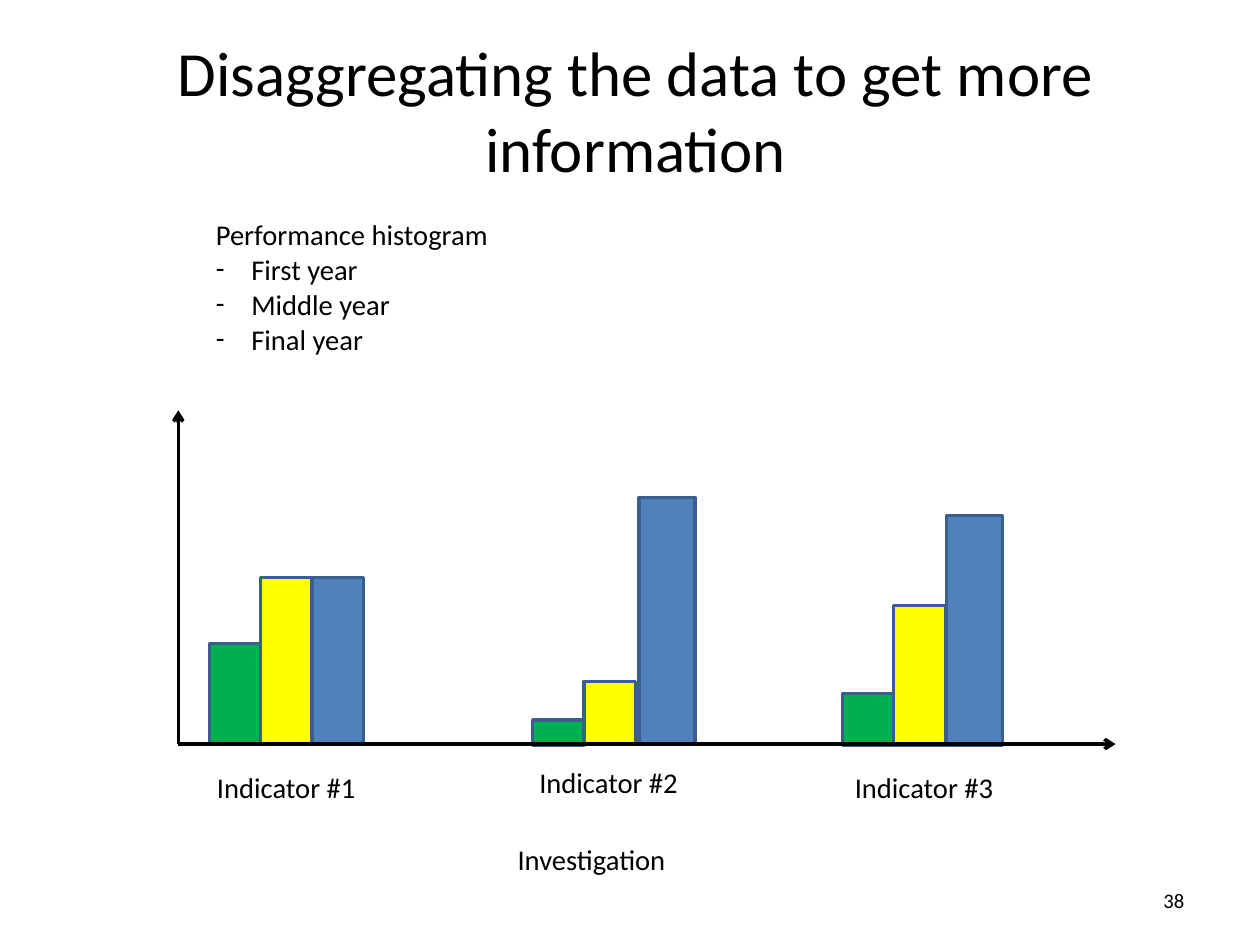
from lxml import etree
from pptx import Presentation
from pptx import util as u
from pptx.dml.color import RGBColor
from pptx.enum import shapes, text
from pptx.oxml.ns import qn

hues = {"ink": "000000", "first": "00B050", "middle": "FFFF00",
        "final": "4F81BD", "edge": "3A5F8C"}

deck = Presentation()
deck.slide_width, deck.slide_height = u.Inches(28 / 2.54), u.Inches(21 / 2.54)
slide = deck.slides.add_slide(deck.slide_layouts[6])


def color(name):
    return RGBColor.from_string(hues[name])


def write(box, lines, size=18, align="LEFT", pad=(0.1, 0.05), space=1.02, anchor="TOP"):
    frame = slide.shapes.add_textbox(*map(u.Inches, box)).text_frame
    frame.word_wrap = True
    frame.vertical_anchor = getattr(text.MSO_ANCHOR, anchor)
    frame.margin_left = frame.margin_right = u.Inches(pad[0])
    frame.margin_top = frame.margin_bottom = u.Inches(pad[1])
    for i, line in enumerate(lines):
        para = frame.add_paragraph() if i else frame.paragraphs[0]
        para.alignment = getattr(text.PP_ALIGN, align)
        para.line_spacing = space
        run = para.add_run()
        run.text = line
        run.font.name, run.font.size = "Calibri", u.Pt(size)
        run.font.color.rgb = color("ink")
    return frame


groups = [
    [("first", 1.83, 5.63, 0.45, 0.88), ("middle", 2.28, 5.05, 0.45, 1.46),
     ("final", 2.73, 5.05, 0.45, 1.46)],
    [("first", 4.66, 6.3, 0.45, 0.22), ("middle", 5.11, 5.96, 0.45, 0.55),
     ("final", 5.59, 4.35, 0.49, 2.16)],
    [("first", 7.37, 6.07, 0.45, 0.45), ("middle", 7.82, 5.3, 0.45, 1.22),
     ("final", 8.28, 4.51, 0.49, 2.01)],
]
for group in groups:
    for year, *box in group:
        bar = slide.shapes.add_shape(shapes.MSO_SHAPE.RECTANGLE, *map(u.Inches, box))
        bar.shadow.inherit = False
        bar.fill.solid()
        bar.fill.fore_color.rgb = color(year)
        bar.line.color.rgb = color("edge")
        bar.line.width = u.Pt(2)

for end in [(1.56, 3.59), (9.76, 6.51)]:
    axis = slide.shapes.add_connector(
        shapes.MSO_CONNECTOR.STRAIGHT, *map(u.Inches, (1.56, 6.51, *end)))
    axis.line.color.rgb = color("ink")
    axis.line.width = u.Pt(2.25)
    etree.SubElement(axis.line._get_or_add_ln(), qn("a:tailEnd"), type="arrow")
    etree.SubElement(axis._element.spPr, qn("a:effectLst"))

write((0.6, 0.51, 9.92, 0.89), ["Disaggregating the data to get more information"],
      39.6, "CENTER", (0.11, 0.06), 1, "MIDDLE")
write((7.9, 7.66, 2.57, 0.44), ["38"], 13, "RIGHT", (0.11, 0.06), 1, "MIDDLE")
write((4.43, 7.31, 1.81, 0.41), ["Investigation"])
for i, (left, top) in enumerate([(1.8, 6.68), (4.62, 6.64), (7.38, 6.68)], 1):
    write((left, top, 1.42, 0.41), [f"Indicator #{i}"])

legend = write((1.79, 1.84, 3.32, 1.34),
               ["Performance histogram", "First year", "Middle year", "Final year"])
for para in legend.paragraphs[1:]:
    props = para._p.get_or_add_pPr()
    props.set("marL", str(u.Inches(0.31)))
    props.set("indent", str(-u.Inches(0.31)))
    tint = etree.SubElement(props, qn("a:buClr"))
    etree.SubElement(tint, qn("a:srgbClr"), val=hues["ink"])
    etree.SubElement(props, qn("a:buFont"), typeface="Calibri")
    etree.SubElement(props, qn("a:buChar"), char="-")

deck.save("out.pptx")
